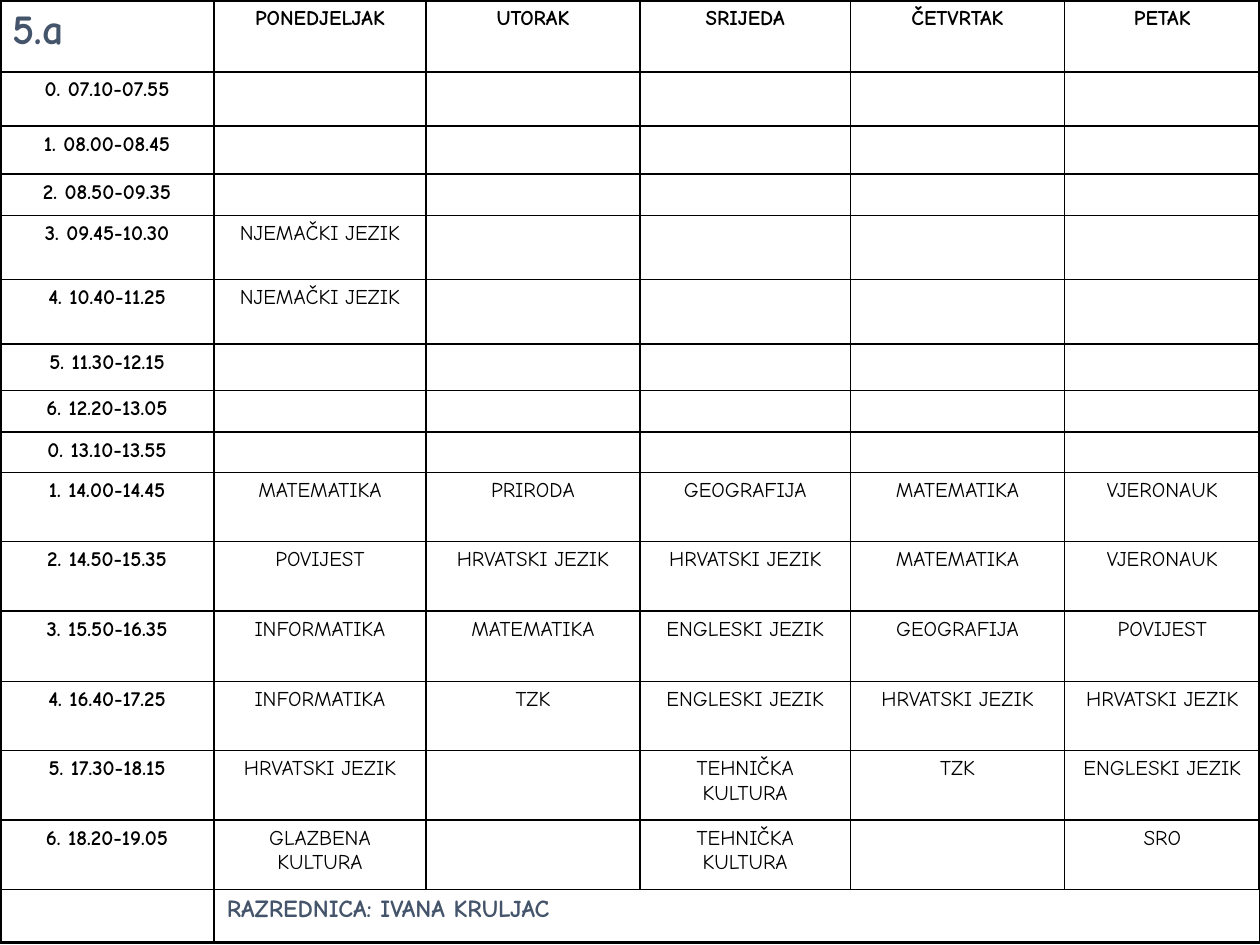
from lxml import etree
from pptx import Presentation
from pptx.dml.color import RGBColor
from pptx.enum import text
from pptx.oxml import ns
from pptx.util import Inches, Pt

HUES = {"ink": "000000", "accent": "44546A"}
COLS = [1.7, 1.68, 1.7, 1.67, 1.7, 1.55]
ROWS = [0.57, 0.43, 0.38, 0.33, 0.51, 0.51, 0.37, 0.33, 0.32,
        0.55, 0.55, 0.56, 0.55, 0.55, 0.55, 0.42]
MAT, HRV, ENG = "MATEMATIKA", "HRVATSKI JEZIK", "ENGLESKI JEZIK"
NJEM, GEO, POV = "NJEMAČKI JEZIK", "GEOGRAFIJA", "POVIJEST"
INF, TEH, VJER = "INFORMATIKA", "TEHNIČKA KULTURA", "VJERONAUK"
PLAN = [
    ["5.a", "PONEDJELJAK", "UTORAK", "SRIJEDA", "ČETVRTAK", "PETAK"],
    ["0. 07.10-07.55"],
    ["1. 08.00-08.45"],
    ["2. 08.50-09.35"],
    ["3. 09.45-10.30", NJEM],
    ["4. 10.40-11.25", NJEM],
    ["5. 11.30-12.15"],
    ["6. 12.20-13.05"],
    ["0. 13.10-13.55"],
    ["1. 14.00-14.45", MAT, "PRIRODA", GEO, MAT, VJER],
    ["2. 14.50-15.35", POV, HRV, HRV, MAT, VJER],
    ["3. 15.50-16.35", INF, MAT, ENG, GEO, POV],
    ["4. 16.40-17.25", INF, "TZK", ENG, HRV, HRV],
    ["5. 17.30-18.15", HRV, "", TEH, "TZK", ENG],
    ["6. 18.20-19.05", "GLAZBENA KULTURA", "", TEH, "", "SRO"],
    ["", "RAZREDNICA: IVANA KRULJAC"],
]


def write(cell, words, size=12, bold=False, hue="ink", align="CENTER"):
    par = cell.text_frame.paragraphs[0]
    par.alignment = getattr(text.PP_ALIGN, align)
    if not words:
        etree.SubElement(par._p, ns.qn("a:endParaRPr"), sz=str(size * 100))
        return
    run = par.add_run()
    run.text = words
    font = run.font
    font.name, font.size, font.bold = "Comic Neue", Pt(size), bold
    font.color.rgb = RGBColor.from_string(HUES[hue])


class Deck:
    def __init__(self):
        self.prs = Presentation()
        self.prs.slide_width, self.prs.slide_height = Inches(10), Inches(7.5)
        self.slide = self.prs.slides.add_slide(self.prs.slide_layouts[6])

    def border(self, cell, sides):
        props = cell._tc.get_or_add_tcPr()
        for side, width in sides.items():
            line = etree.SubElement(props, ns.qn("a:ln" + side), w=str(Pt(width)))
            fill = etree.SubElement(line, ns.qn("a:solidFill"))
            etree.SubElement(fill, ns.qn("a:srgbClr"), val=HUES["ink"])
        cell.fill.background()

    def table(self, cols, rows):
        frame = self.slide.shapes.add_table(
            len(rows), len(cols), 0, 0, Inches(sum(cols)), Inches(sum(rows)))
        grid = frame.table
        grid.first_row = grid.horz_banding = False
        for col, width in zip(grid.columns, cols):
            col.width = Inches(width)
        for row, height in zip(grid.rows, rows):
            row.height = Inches(height)
        for r in range(len(rows)):
            for c in range(len(cols)):
                ends = {"L": c == 0, "R": c == len(cols) - 1,
                        "T": r == 0, "B": r == len(rows) - 1}
                self.border(grid.cell(r, c),
                            {side: 2.25 if end else 1 for side, end in ends.items()})
        return grid


def main():
    deck = Deck()
    grid = deck.table(COLS, ROWS)
    last = len(ROWS) - 1
    grid.cell(last, 1).merge(grid.cell(last, len(COLS) - 1))
    special = {
        (0, 0): dict(size=24, hue="accent", align="LEFT"),
        (last, 1): dict(size=14, hue="accent", align="LEFT"),
    }
    for r, row in enumerate(PLAN):
        for c in range(len(COLS)):
            words = row[c] if c < len(row) else ""
            bold = r in (0, last) or c == 0
            write(grid.cell(r, c), words, bold=bold, **special.get((r, c), {}))
    deck.prs.save("out.pptx")


if __name__ == "__main__":
    main()
